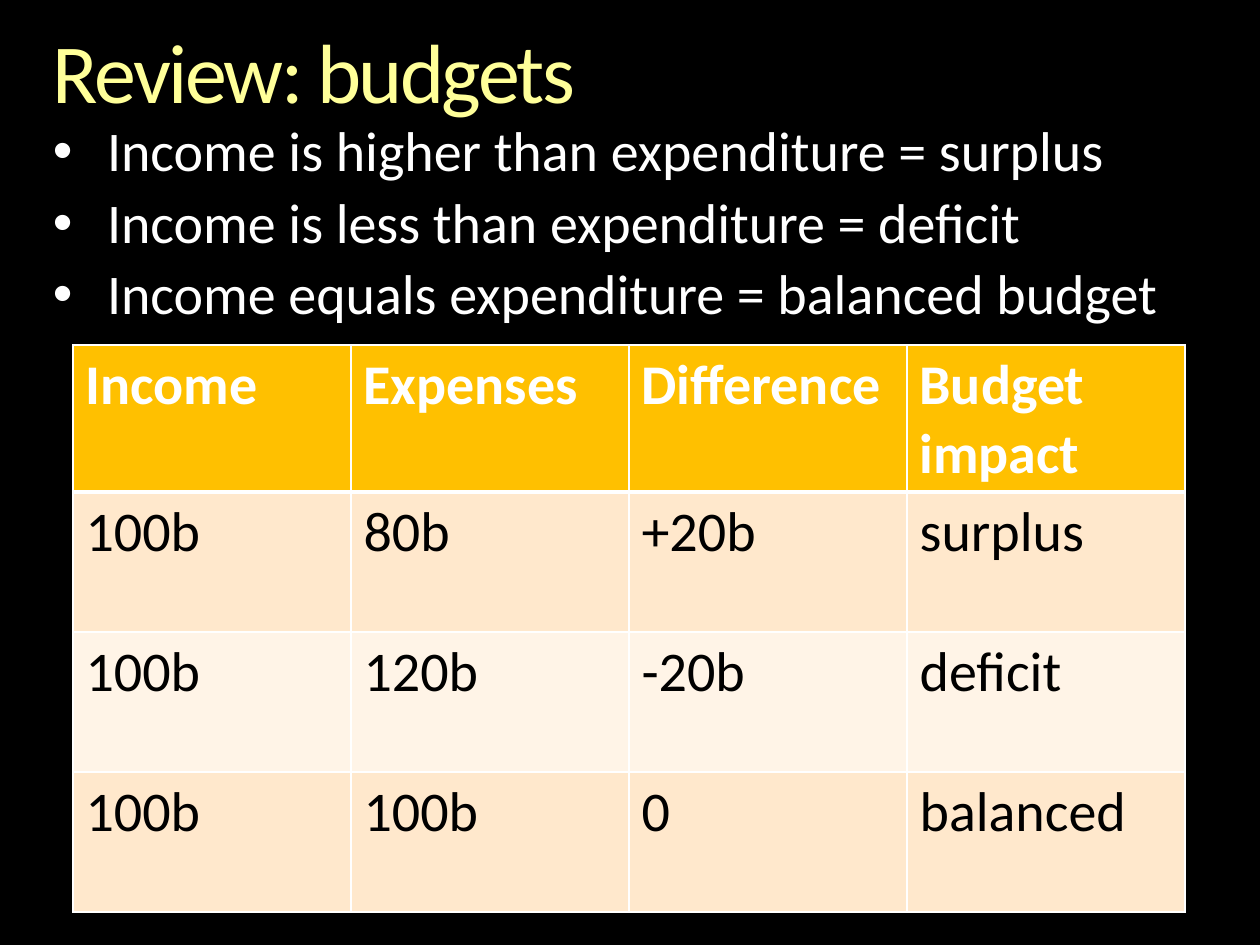
from lxml.etree import SubElement
from pptx import Presentation
from pptx.dml.color import RGBColor
from pptx.oxml.ns import qn
from pptx.util import Pt

EMU_PER_PX = 914400 / 126
FONT = "Calibri"
BULLETS = [
    "Income is higher than expenditure = surplus",
    "Income is less than expenditure = deficit",
    "Income equals expenditure = balanced budget",
]
BUDGET_ROWS = [
    ["Income", "Expenses", "Difference", "Budget impact"],
    ["100b", "80b", "+20b", "surplus"],
    ["100b", "120b", "-20b", "deficit"],
    ["100b", "100b", "0", "balanced"],
]


def px(length):
    return round(length * EMU_PER_PX)


def color(hex_string):
    return RGBColor.from_string(hex_string)


def format_runs(paragraph, size, hex_color, bold=False, spacing=None):
    """Format every run; spacing is in hundredths of a point."""
    for run in paragraph.runs:
        run.font.name = FONT
        run.font.size = Pt(size)
        run.font.bold = bold
        run.font.color.rgb = color(hex_color)
        if spacing is not None:
            run.font._element.set("spc", str(spacing))


def add_text(slide, left, top, width, height, text):
    text_frame = slide.shapes.add_textbox(px(left), px(top), px(width), px(height)).text_frame
    text_frame.word_wrap = True
    text_frame.margin_left = text_frame.margin_right = 0
    text_frame.margin_top = text_frame.margin_bottom = 0
    text_frame.text = text
    for paragraph in text_frame.paragraphs:
        paragraph.line_spacing = 0.9
    return text_frame


def add_title(slide):
    text_frame = add_text(slide, 53, 31, 1155, 92, "Review: budgets")
    format_runs(text_frame.paragraphs[0], 48, "FFFF99", spacing=-150)


def add_bullets(slide):
    text_frame = add_text(slide, 53, 123, 1155, 210, "\n".join(BULLETS))
    for index, paragraph in enumerate(text_frame.paragraphs):
        if index:
            paragraph.space_before = Pt(6.4)
        properties = paragraph._p.get_or_add_pPr()
        properties.set("marL", str(px(54)))
        properties.set("indent", str(-px(54)))
        SubElement(properties, qn("a:buFont"), typeface="Arial")
        SubElement(properties, qn("a:buChar"), char="•")
        format_runs(paragraph, 32, "FFFFFF")


def set_border(cell, side, width):
    line = SubElement(cell._tc.get_or_add_tcPr(), qn(f"a:ln{side}"), w=str(Pt(width)))
    fill = SubElement(line, qn("a:solidFill"))
    SubElement(fill, qn("a:srgbClr"), val="FFFFFF")


def format_cell(cell, row):
    is_header = row == 0
    widths = {"L": 1, "R": 1, "T": 3 if row == 1 else 1, "B": 3 if is_header else 1}
    for side, width in widths.items():
        set_border(cell, side, width)
    cell.fill.solid()
    band = "FFE8CC" if row % 2 else "FFF4E7"
    cell.fill.fore_color.rgb = color("FFC000" if is_header else band)
    text_color = "FFFFFF" if is_header else "000000"
    format_runs(cell.text_frame.paragraphs[0], 32, text_color, bold=is_header)


def add_budget_table(slide):
    row_count, column_count = len(BUDGET_ROWS), len(BUDGET_ROWS[0])
    table = slide.shapes.add_table(
        row_count, column_count, px(73), px(345), px(278 * column_count), px(140 * row_count)
    ).table
    for row, texts in enumerate(BUDGET_ROWS):
        for column, text in enumerate(texts):
            cell = table.cell(row, column)
            cell.text_frame.text = text
            format_cell(cell, row)


def main():
    presentation = Presentation()
    presentation.slide_width, presentation.slide_height = px(1260), px(945)
    slide = presentation.slides.add_slide(presentation.slide_layouts[6])
    slide.background.fill.solid()
    slide.background.fill.fore_color.rgb = color("000000")
    add_title(slide)
    add_bullets(slide)
    add_budget_table(slide)
    presentation.save("out.pptx")


if __name__ == "__main__":
    main()
